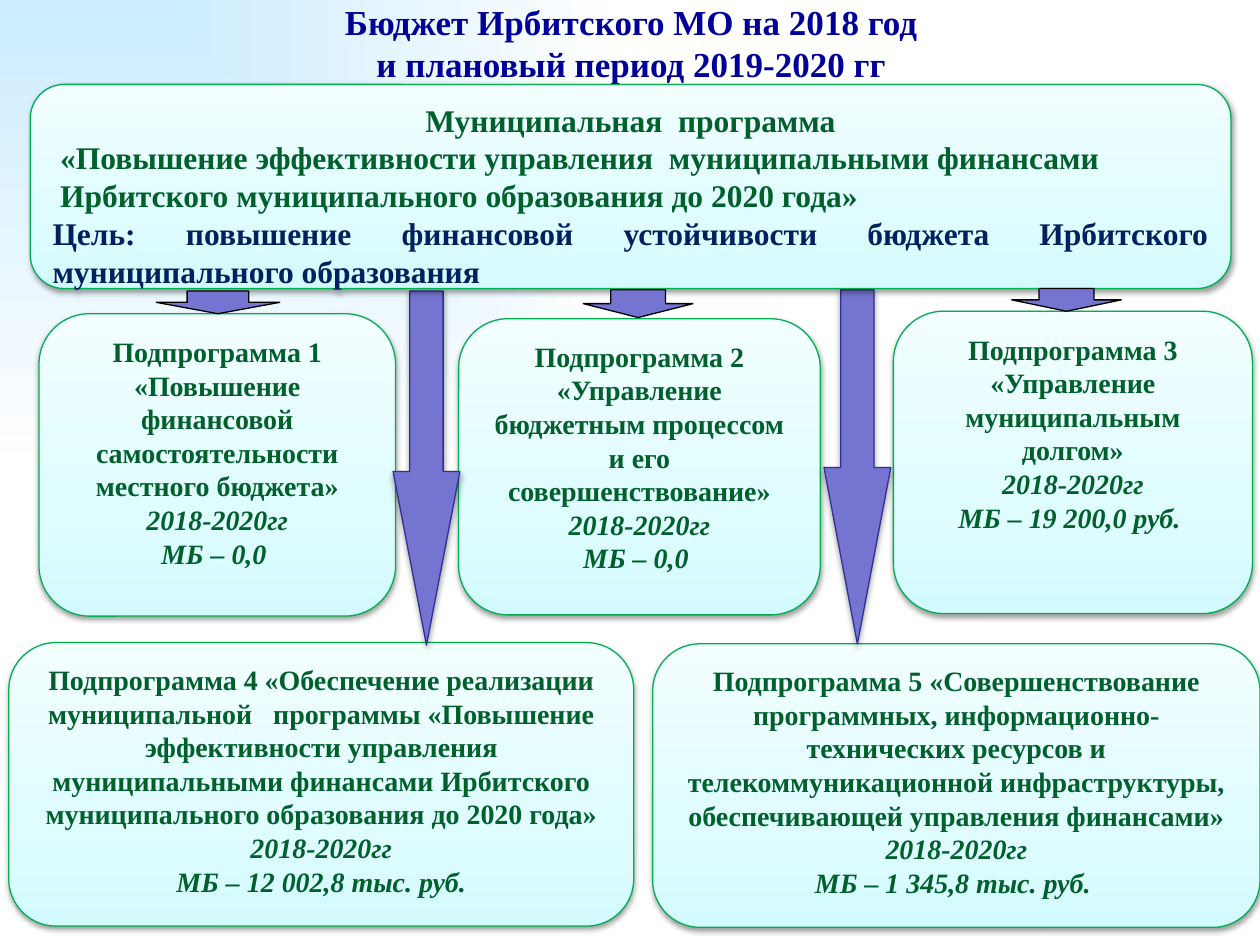
from lxml.etree import SubElement
from pptx import Presentation
from pptx.dml.color import RGBColor
from pptx.enum.shapes import MSO_SHAPE as Preset
from pptx.enum.text import MSO_ANCHOR as Anchor, PP_ALIGN as Align
from pptx.oxml.ns import qn
from pptx.util import Inches, Pt

COLORS = {
    "title": "000099", "green": "00602B", "navy": "002060", "border": "00B050",
    "arrow": "7575D1", "arrow_edge": "2F2F98", "black": "000000",
}
FONT = "Times New Roman"
BACKGROUND_STOPS = [(0, "CCECFF"), (100, "FFFFFF")]
CARD_STOPS = [(0, "D3FBFF"), (35, "DFFCFF"), (100, "F2FEFF")]

TITLE = "Бюджет Ирбитского МО на 2018 год\vи плановый период 2019-2020 гг"

# Programme lines: text, alignment, colour, left indent
PROGRAMME_BOX = (0.24, 0.67, 9.53, 1.62)
PROGRAMME = [
    ("Муниципальная  программа", Align.CENTER, "green", 0),
    ("«Повышение эффективности управления  муниципальными финансами",
     Align.LEFT, "green", 0.06),
    ("Ирбитского муниципального образования до 2020 года»",
     Align.LEFT, "green", 0.06),
    ("Цель: повышение финансовой устойчивости бюджета Ирбитского "
     "муниципального образования", Align.JUSTIFY, "navy", 0),
]

# Subprogrammes: box, name, budget
YEARS = "2018-2020гг"
SUBPROGRAMMES = [
    ((0.31, 2.49, 2.83, 2.4),
     "Подпрограмма 1 «Повышение финансовой самостоятельности местного бюджета»",
     "МБ – 0,0 "),
    ((3.64, 2.53, 2.87, 2.35),
     "Подпрограмма 2 «Управление бюджетным процессом и его совершенствование»",
     "МБ – 0,0 "),
    ((7.09, 2.47, 2.85, 2.4),
     "Подпрограмма 3 «Управление муниципальным долгом»",
     "МБ – 19 200,0 руб. "),
    ((0.07, 5.1, 4.96, 2.25),
     "Подпрограмма 4 «Обеспечение реализации муниципальной   программы "
     "«Повышение эффективности управления муниципальными финансами Ирбитского "
     "муниципального образования до 2020 года»",
     "МБ – 12 002,8 тыс. руб."),
    ((5.18, 5.11, 4.82, 2.25),
     "Подпрограмма 5 «Совершенствование программных, информационно-технических "
     "ресурсов и телекоммуникационной инфраструктуры, обеспечивающей управления "
     "финансами»",
     "МБ – 1 345,8 тыс. руб. "),
]

LONG_ARROWS = [((3.12, 2.31, 0.53, 2.81), 2.6), ((6.54, 2.3, 0.53, 2.81), 2.64)]
SHORT_ARROWS = [(1.24, 2.31, 0.98, 0.18), (8.03, 2.29, 0.87, 0.18),
                (4.63, 2.3, 0.87, 0.22)]


def rgb(name):
    return RGBColor.from_string(COLORS[name])


def set_gradient(fill, element, stops, angle=None):
    """Linear gradient at an angle, or from the top left corner without one."""
    fill.gradient()
    gradient = element.find(".//" + qn("a:gradFill"))
    for child in list(gradient):
        gradient.remove(child)
    stop_list = SubElement(gradient, qn("a:gsLst"))
    for position, color in stops:
        stop = SubElement(stop_list, qn("a:gs"), pos=str(position * 1000))
        SubElement(stop, qn("a:srgbClr"), val=color)
    if angle is None:
        corner = SubElement(gradient, qn("a:path"), {"path": "rect"})
        SubElement(corner, qn("a:fillToRect"), r="100000", b="100000")
    else:
        SubElement(gradient, qn("a:lin"), ang=str(angle * 60000), scaled="1")


def add_shape(slide, preset, box, edge, shadow=True):
    shape = slide.shapes.add_shape(preset, *map(Inches, box))
    shape.line.color.rgb = rgb(edge)
    shape.line.width = Pt(0.75)
    shape.shadow.inherit = False
    if shadow:
        effects = shape.element.spPr.find(qn("a:effectLst"))
        outer = SubElement(effects, qn("a:outerShdw"), blurRad="40000",
                           dist="20000", dir="5400000", rotWithShape="0")
        color = SubElement(outer, qn("a:srgbClr"), val=COLORS["black"])
        SubElement(color, qn("a:alpha"), val="38000")
    return shape


def add_card(slide, box):
    card = add_shape(slide, Preset.ROUNDED_RECTANGLE, box, "border")
    set_gradient(card.fill, card.element, CARD_STOPS, 270)
    card.text_frame.word_wrap = True
    card.text_frame.vertical_anchor = Anchor.TOP
    return card


def add_arrow(slide, box, edge, shadow):
    arrow = add_shape(slide, Preset.DOWN_ARROW, box, edge, shadow)
    arrow.fill.solid()
    arrow.fill.fore_color.rgb = rgb("arrow")
    return arrow


def write(paragraph, text, size, color="green", align=Align.CENTER, italic=False):
    paragraph.text = text
    paragraph.alignment = align
    paragraph.font.color.rgb = rgb(color)
    for run in paragraph.runs:
        run.font.color.rgb = rgb(color)
        style = {"name": FONT, "size": Pt(size), "bold": True, "italic": italic}
        for key, value in style.items():
            setattr(run.font, key, value)


def next_paragraph(frame, index):
    return frame.add_paragraph() if index else frame.paragraphs[0]


def main():
    presentation = Presentation()
    presentation.slide_width, presentation.slide_height = Inches(10), Inches(7.5)
    slide = presentation.slides.add_slide(presentation.slide_layouts[5])
    set_gradient(slide.background.fill, slide.element, BACKGROUND_STOPS)

    # Title
    title = slide.shapes.title
    title_box = dict(left=0.51, top=0, width=9, height=0.67)
    for key, value in title_box.items():
        setattr(title, key, Inches(value))
    frame = title.text_frame
    frame.margin_top = frame.margin_bottom = 0
    frame.vertical_anchor = Anchor.MIDDLE
    write(frame.paragraphs[0], TITLE, 20, "title")

    # Subprogramme cards
    for box, name, budget in SUBPROGRAMMES:
        frame = add_card(slide, box).text_frame
        for index, text in enumerate((name, YEARS, budget)):
            write(next_paragraph(frame, index), text, 16, italic=index > 0)

    # Arrows to the lower row
    for box, head in LONG_ARROWS:
        arrow = add_arrow(slide, box, "arrow_edge", True)
        arrow.adjustments[1] = head

    # Programme card
    frame = add_card(slide, PROGRAMME_BOX).text_frame
    for index, (text, align, color, indent) in enumerate(PROGRAMME):
        paragraph = next_paragraph(frame, index)
        write(paragraph, text, 18, color, align)
        if indent:
            paragraph._p.get_or_add_pPr().set("marL", str(Inches(indent)))

    # Arrows to the upper row
    for box in SHORT_ARROWS:
        add_arrow(slide, box, "black", False)

    presentation.save("out.pptx")


if __name__ == "__main__":
    main()
